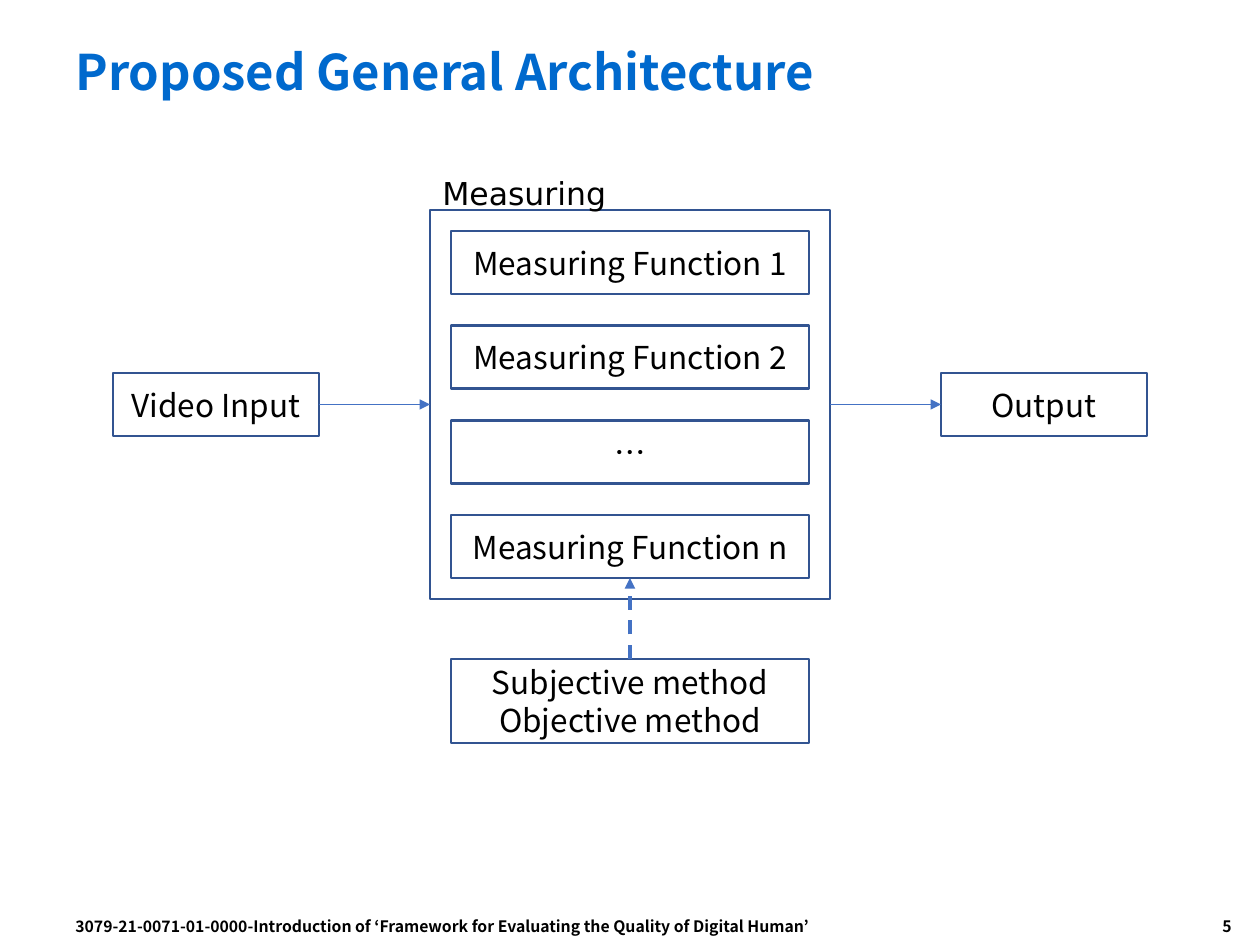
from lxml import etree
from pptx import Presentation
from pptx import util as u
from pptx.dml.color import RGBColor
from pptx.enum import dml, shapes, text
from pptx.oxml.ns import qn

HUES = {"title": "0069CD", "ink": "000000", "edge": "325491",
        "link": "4472C4", "paper": "FFFFFF"}
SANS, PLAIN = "Noto Sans CJK KR", "DejaVu Sans"
LEFT, MID, RIGHT = text.PP_ALIGN.LEFT, text.PP_ALIGN.CENTER, text.PP_ALIGN.RIGHT
TOP, HALF = text.MSO_ANCHOR.TOP, text.MSO_ANCHOR.MIDDLE

TITLE = "Proposed General Architecture"
FOOTER = ("3079-21-0071-01-0000-Introduction of "
          "‘Framework for Evaluating the Quality of Digital Human’")
STEPS = ["Measuring Function 1", "Measuring Function 2", "…",
         "Measuring Function n"]
FRAME = (430, 210, 400, 389)
INSET, STEP_H, SIDE_W = 21, 63, 206
COL_X, COL_W = FRAME[0] + INSET, FRAME[2] - 2 * INSET
GAP = (FRAME[3] - 2 * INSET - len(STEPS) * STEP_H) / (len(STEPS) - 1)
SIDE_Y = FRAME[1] + (FRAME[3] - STEP_H) / 2

BOXES = [("frame", [], FRAME)]
BOXES += [(name, [name], (COL_X, FRAME[1] + INSET + i * (STEP_H + GAP), COL_W, STEP_H))
          for i, name in enumerate(STEPS)]
BOXES += [
    ("input", ["Video Input"], (113, SIDE_Y, SIDE_W, STEP_H)),
    ("output", ["Output"], (941, SIDE_Y, SIDE_W, STEP_H)),
    ("methods", ["Subjective method", "Objective method"], (COL_X, 659, COL_W, 84)),
]
NOTES = [
    (FOOTER, (63, 911, 903, 34), LEFT, True, {"size": 9, "name": SANS, "bold": True}),
    ("5", (1040, 911, 204, 34), RIGHT, True, {"size": 9, "name": SANS, "bold": True}),
    ("Measuring", (430, 168, 189, 50), LEFT, False, {"size": 18, "name": PLAIN}),
]
LINKS = [
    ("input", 3, "frame", 1, 0.5, None),
    ("frame", 3, "output", 1, 0.5, None),
    ("methods", 0, STEPS[-1], 2, 2, dml.MSO_LINE.DASH),
]


def px(n):
    return u.Emu(round(n * 914400 / 126))


def hue(key):
    return RGBColor.from_string(HUES[key])


def place(shape, spot):
    for key, n in zip(("left", "top", "width", "height"), spot):
        setattr(shape, key, px(n))


def write(shape, lines, look, align, anchor, wrap=True, ink="ink"):
    frame = shape.text_frame
    frame.text = "\n".join(lines)
    frame.word_wrap = wrap
    frame.vertical_anchor = anchor
    for para in frame.paragraphs:
        para.alignment = align
        for key, val in look.items():
            setattr(para.font, key, u.Pt(val) if key == "size" else val)
        para.font.color.rgb = hue(ink)


def add_box(slide, lines, spot):
    box = slide.shapes.add_shape(shapes.MSO_SHAPE.RECTANGLE, *map(px, spot))
    box.shadow.inherit = False
    box.fill.solid()
    box.fill.fore_color.rgb = hue("paper")
    box.line.color.rgb = hue("edge")
    box.line.width = u.Pt(1.5)
    if lines:
        write(box, lines, {"size": 18, "name": SANS}, MID, HALF)
    return box


def add_link(slide, start, out, end, into, width, dash):
    link = slide.shapes.add_connector(shapes.MSO_CONNECTOR.STRAIGHT, 0, 0, 0, 0)
    link.begin_connect(start, out)
    link.end_connect(end, into)
    link.line.color.rgb = hue("link")
    link.line.width = u.Pt(width)
    if dash:
        link.line.dash_style = dash
    etree.SubElement(link.line._get_or_add_ln(), qn("a:tailEnd"), type="triangle")
    etree.SubElement(link._element.spPr, qn("a:effectLst"))


def main():
    deck = Presentation()
    deck.slide_width, deck.slide_height = px(1260), px(945)
    slide = deck.slides.add_slide(deck.slide_layouts[5])

    title = slide.shapes.title
    place(title, (63, 32, 1134, 86))
    write(title, [TITLE], {"size": 28, "name": SANS, "bold": True}, LEFT, HALF,
          ink="title")
    title.text_frame.paragraphs[0].line_spacing = 0.9

    made = {name: add_box(slide, lines, spot) for name, lines, spot in BOXES}
    for words, spot, align, wrap, look in NOTES:
        note = slide.shapes.add_textbox(*map(px, spot))
        write(note, [words], look, align, TOP, wrap)
    for start, out, end, into, width, dash in LINKS:
        add_link(slide, made[start], out, made[end], into, width, dash)

    deck.save("out.pptx")


if __name__ == "__main__":
    main()
